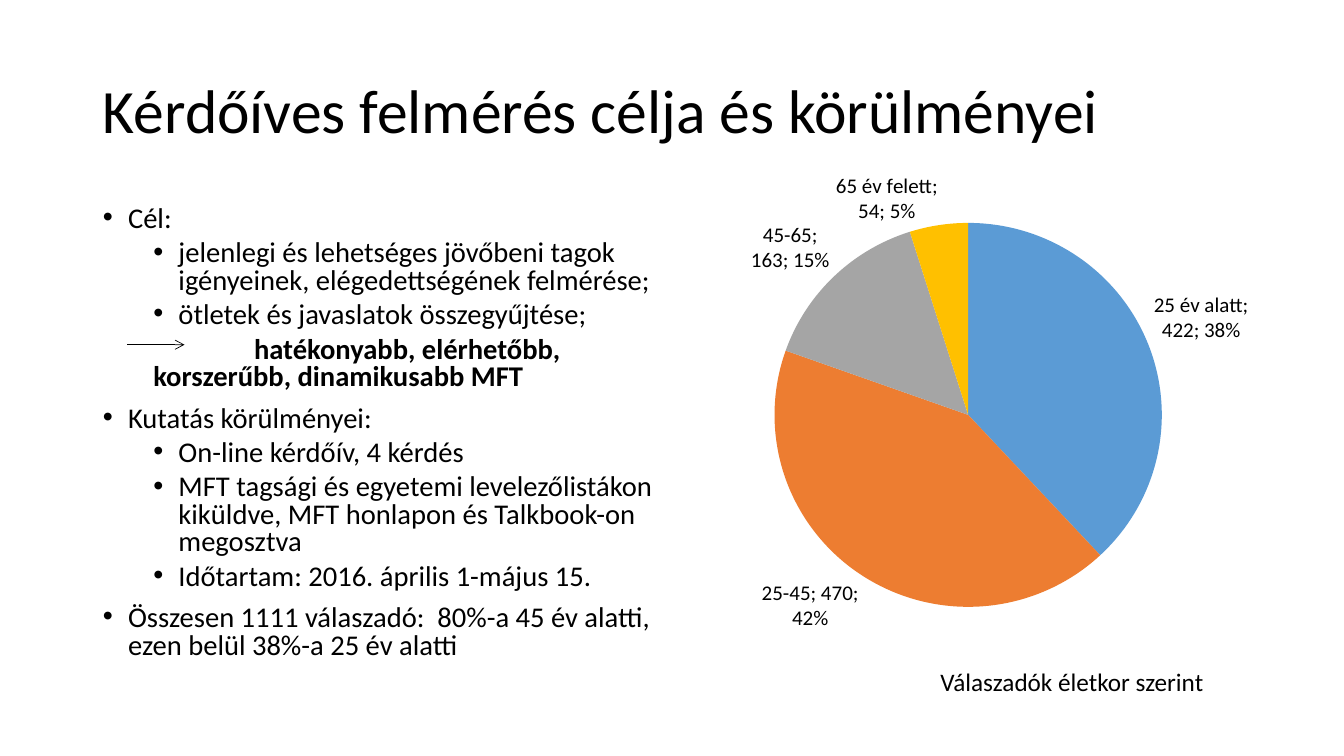
from lxml import etree
from pptx import Presentation
from pptx.chart.data import CategoryChartData
from pptx.dml.color import RGBColor
from pptx.enum import chart as ch, shapes, text
from pptx.oxml import parse_xml
from pptx.oxml.ns import nsdecls, qn
from pptx.util import Inches, Pt

FONT = "Calibri"
COLORS = {"text": "000000", "under 25": "5B9BD5", "25-45": "ED7D31",
          "45-65": "A5A5A5", "over 65": "FFC000"}


def style_font(font, size, bold=False):
    font.name, font.size, font.bold = FONT, Pt(size), bold
    font.color.rgb = RGBColor.from_string(COLORS["text"])


def place(shape, left, top, width, height):
    shape.left, shape.top = Inches(left), Inches(top)
    shape.width, shape.height = Inches(width), Inches(height)


prs = Presentation()
prs.slide_width, prs.slide_height = Inches(13.33), Inches(7.5)
slide = prs.slides.add_slide(prs.slide_layouts[1])

# Title
title = slide.shapes.title
place(title, 0.92, 0.4, 11.5, 1.45)
title.text_frame.vertical_anchor = text.MSO_ANCHOR.MIDDLE
title.text_frame.auto_size = text.MSO_AUTO_SIZE.NONE
heading = title.text_frame.paragraphs[0]
heading.alignment = text.PP_ALIGN.LEFT
heading.line_spacing = 0.9
heading_run = heading.add_run()
heading_run.text = "Kérdőíves felmérés célja és körülményei"
style_font(heading_run.font, 44)

# Goals and circumstances: kind -> level, left margin, first-line indent, space before
KINDS = {"main": (0, 0.25, -0.25, 10), "sub": (1, 0.75, -0.25, 5),
         "result": (1, 0.5, 1, 5)}
POINTS = [
    ("main", "Cél:"),
    ("sub", "jelenlegi és lehetséges jövőbeni tagok igényeinek, elégedettségének felmérése;"),
    ("sub", "ötletek és javaslatok összegyűjtése;"),
    ("result", "hatékonyabb, elérhetőbb, korszerűbb, dinamikusabb MFT"),
    ("main", "Kutatás körülményei:"),
    ("sub", "On-line kérdőív, 4 kérdés"),
    ("sub", "MFT tagsági és egyetemi levelezőlistákon kiküldve, MFT honlapon és Talkbook-on megosztva"),
    ("sub", "Időtartam: 2016. április 1-május 15."),
    ("main", "Összesen 1111 válaszadó:  80%-a 45 év alatti, ezen belül 38%-a 25 év alatti"),
]
body = slide.placeholders[1]
place(body, 0.92, 2, 5.77, 4.76)
body.text_frame.auto_size = text.MSO_AUTO_SIZE.NONE
for i, (kind, wording) in enumerate(POINTS):
    point = body.text_frame.add_paragraph() if i else body.text_frame.paragraphs[0]
    level, margin, indent, before = KINDS[kind]
    point.level, point.line_spacing, point.space_before = level, 0.8, Pt(before)
    point_run = point.add_run()
    point_run.text = wording
    style_font(point_run.font, 20.4, kind == "result")
    props = point._p.get_or_add_pPr()
    props.set("marL", str(Inches(margin)))
    props.set("indent", str(Inches(indent)))
    if kind == "result":
        etree.SubElement(props, qn("a:buNone"))
    else:
        etree.SubElement(props, qn("a:buFont")).set("typeface", "Arial")
        etree.SubElement(props, qn("a:buChar")).set("char", "•")

# Arrow leading to the result
arrow = slide.shapes.add_connector(shapes.MSO_CONNECTOR.STRAIGHT, Inches(1.26),
                                   Inches(3.42), Inches(1.83), Inches(3.42))
arrow.line.color.rgb = RGBColor.from_string(COLORS["text"])
arrow.line.width = Pt(0.5)
etree.SubElement(arrow.line._get_or_add_ln(), qn("a:tailEnd")).set("type", "arrow")
etree.SubElement(arrow._element.spPr, qn("a:effectLst"))

# Respondents by age
ages = CategoryChartData()
ages.categories = ["25 év alatt", "25-45", "45-65", "65 év felett"]
ages.add_series("Series 1", [422, 470, 163, 54])
pie = slide.shapes.add_chart(ch.XL_CHART_TYPE.PIE, Inches(7.15), Inches(1.68),
                             Inches(5.91), Inches(4.98), ages).chart
pie.has_title = pie.has_legend = False
style_font(pie.font, 10)
pie.plots[0].vary_by_categories = True
respondents = pie.plots[0].series[0]
for i, slice_name in enumerate(["under 25", "25-45", "45-65", "over 65"]):
    fill = respondents.points[i].format.fill
    fill.solid()
    fill.fore_color.rgb = RGBColor.from_string(COLORS[slice_name])

labels = respondents.data_labels
labels.show_value = labels.show_percentage = labels.show_category_name = True
labels.position = ch.XL_LABEL_POSITION.OUTSIDE_END
style_font(labels.font, 15)
separator = parse_xml(f'<c:separator {nsdecls("c")}>; </c:separator>')
labels._element.find(qn("c:showBubbleSize")).addnext(separator)

plot_area = pie._chartSpace.chart.plotArea
for old_layout in plot_area.findall(qn("c:layout")):
    plot_area.remove(old_layout)
plot_area.insert(0, parse_xml(
    f'<c:layout {nsdecls("c")}><c:manualLayout><c:layoutTarget val="inner"/>'
    '<c:xMode val="edge"/><c:yMode val="edge"/><c:x val="0.09"/><c:y val="0.08"/>'
    '<c:w val="0.65"/><c:h val="0.81"/></c:manualLayout></c:layout>'))

# Chart caption
caption = slide.shapes.add_textbox(Inches(9.23), Inches(6.56), Inches(2.97), Inches(0.4))
caption.text_frame.word_wrap = False
caption.text_frame.auto_size = text.MSO_AUTO_SIZE.SHAPE_TO_FIT_TEXT
caption_run = caption.text_frame.paragraphs[0].add_run()
caption_run.text = "Válaszadók életkor szerint"
style_font(caption_run.font, 18)

prs.save("out.pptx")
